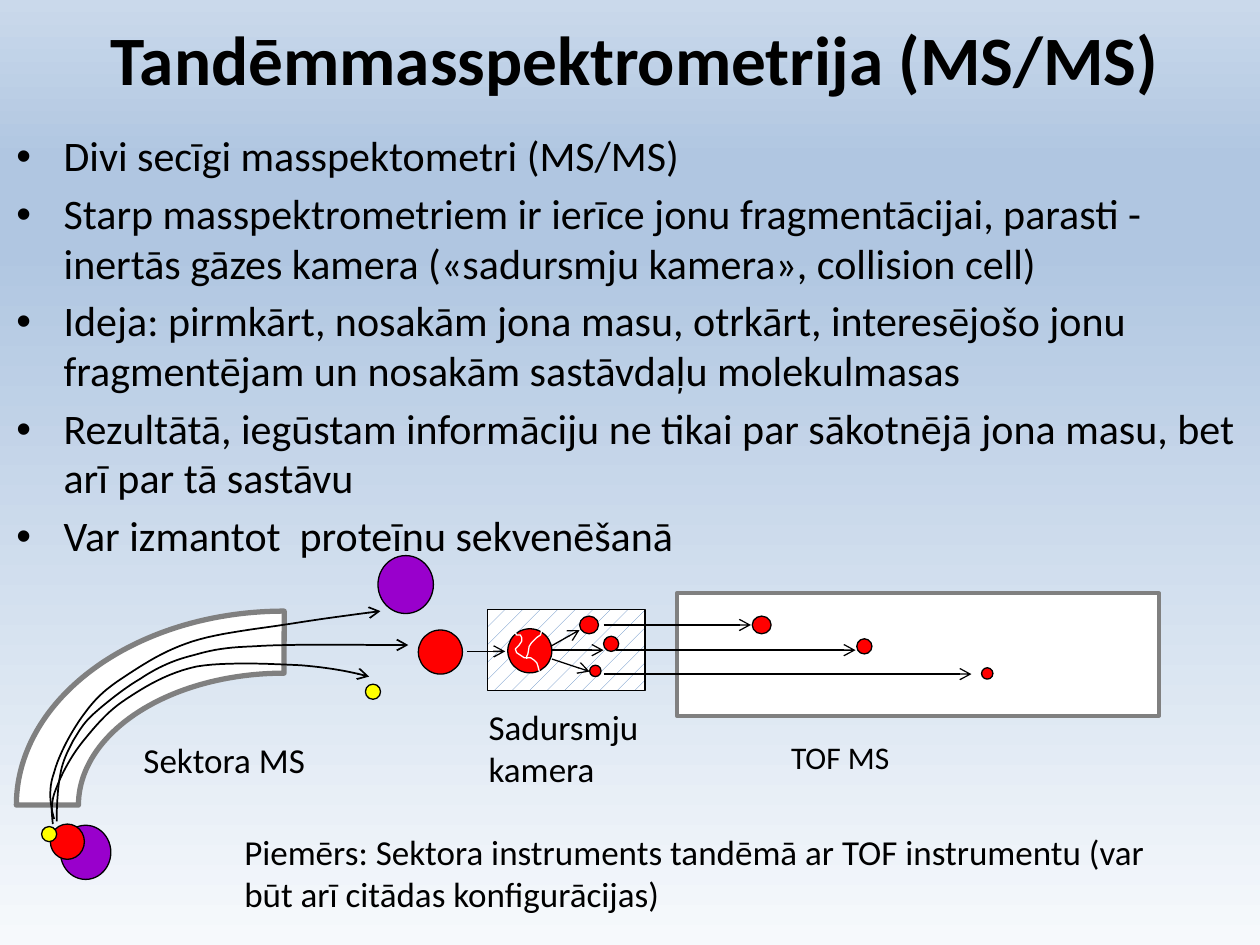
from lxml.etree import SubElement
from pptx import Presentation
from pptx.dml.color import RGBColor
from pptx.enum.dml import MSO_PATTERN
from pptx.enum.shapes import MSO_CONNECTOR, MSO_SHAPE
from pptx.enum.text import MSO_ANCHOR, MSO_AUTO_SIZE, PP_ALIGN
from pptx.oxml.ns import qn
from pptx.util import Pt

PX = 9144
STEPS = 12
SKY = [(0, "F6F9FC"), (74, "B0C6E1"), (83, "B0C6E1"), (100, "CAD9EB")]
RED, PURPLE, YELLOW = "FF0000", "9900CC", "FFFF00"
BLACK, WHITE, GRAY = "000000", "FFFFFF", "808080"

TITLE = "Tandēmmasspektrometrija (MS/MS)"
POINTS = [
    "Divi secīgi masspektometri (MS/MS)",
    "Starp masspektrometriem ir ierīce jonu fragmentācijai, parasti - inertās gāzes kamera («sadursmju kamera», collision cell)",
    "Ideja: pirmkārt, nosakām jona masu, otrkārt, interesējošo jonu fragmentējam un nosakām sastāvdaļu molekulmasas",
    "Rezultātā, iegūstam informāciju ne tikai par sākotnējā jona masu, bet arī par tā sastāvu",
    "Var izmantot  proteīnu sekvenēšanā",
]
LABELS = [
    ("Sektora MS", (104, 581, 189, 44), 20),
    ("Sadursmju kamera", (378, 555, 163, 77), 20),
    ("TOF MS", (618, 581, 288, 40), 18),
    ("Piemērs: Sektora instruments tandēmā ar TOF instrumentu (var būt arī citādas konfigurācijas)",
     (184, 654, 749, 77), 20),
]
PARTS = [
    (MSO_SHAPE.BLOCK_ARC, (13, 485, 425, 308), GRAY, 3),
    (MSO_SHAPE.RECTANGLE, (387, 484, 125, 64), BLACK, 0.75),
    (MSO_SHAPE.RECTANGLE, (537, 471, 383, 97), GRAY, 2.25),
]
IONS = [
    (PURPLE, (48, 655, 40, 43)), (PURPLE, (300, 441, 44, 46)),
    (RED, (332, 500, 35, 35)), (YELLOW, (290, 543, 12, 12)),
    (RED, (40, 654, 27, 28)), (YELLOW, (33, 656, 12, 12)),
    (RED, (403, 499, 35, 35)),
    (RED, (460, 489, 15, 14)), (RED, (479, 505, 12, 12)), (RED, (468, 528, 9, 9)),
    (RED, (597, 489, 15, 14)), (RED, (680, 507, 12, 12)), (RED, (779, 530, 9, 9)),
]
ARROWS = [
    (371, 517, 401, 517), (437, 513, 460, 500), (437, 516, 479, 516),
    (438, 523, 468, 533), (479, 496, 596, 496), (489, 516, 679, 516),
    (479, 535, 771, 535),
]
TRACKS = [
    [(42, 654), (41, 645), (40, 636), (45, 625), (49, 614), (57, 599), (67, 587),
     (76, 576), (86, 564), (100, 555), (115, 545), (133, 534), (156, 529),
     (179, 525), (217, 527), (239, 528), (262, 530), (278, 533), (293, 537)],
    [(43, 650), (40, 639), (38, 627), (43, 613), (47, 598), (58, 578), (68, 565),
     (77, 553), (85, 546), (99, 537), (114, 527), (131, 516), (153, 509),
     (175, 502), (206, 499), (231, 495), (256, 491), (279, 488), (302, 485)],
    [(45, 652), (45, 638), (46, 624), (48, 614), (50, 603), (54, 596), (58, 588),
     (63, 580), (66, 574), (75, 566), (84, 558), (99, 546), (111, 539),
     (123, 531), (135, 525), (150, 521), (165, 517), (173, 514), (202, 513),
     (230, 511), (280, 512), (324, 512)],
]
CRACKS = [
    [(409, 502), (410, 504), (413, 504), (414, 506), (414, 509), (412, 512),
     (409, 515), (410, 518), (413, 520), (416, 522), (421, 522), (424, 524),
     (426, 526), (427, 529), (428, 533)],
    [(430, 500), (429, 504), (426, 506), (424, 508), (422, 510), (420, 513),
     (419, 519), (418, 521), (418, 523)],
]


def hue(code):
    return RGBColor.from_string(code)


def style(obj, **vals):
    for key, val in vals.items():
        setattr(obj, key, val)


def place(shape, box):
    style(shape, **dict(zip(("left", "top", "width", "height"), (n * PX for n in box))))


def write(para, text, size, bold=False):
    run = para.add_run()
    run.text = text
    style(run.font, name="Calibri", size=Pt(size), bold=bold)
    run.font.color.rgb = hue(BLACK)


def edge(shape, code, width):
    shape.line.color.rgb = hue(code)
    shape.line.width = Pt(width)


def tip(shape):
    SubElement(shape.line._get_or_add_ln(), qn("a:tailEnd"), type="arrow")


def solid(kind, box, fill, line, width):
    shape = shapes.add_shape(kind, *(n * PX for n in box))
    shape.shadow.inherit = False
    shape.fill.solid()
    shape.fill.fore_color.rgb = hue(fill)
    edge(shape, line, width)
    return shape


def curve(nodes):
    spots = [nodes[0]]
    for k in range(0, len(nodes) - 1, 3):
        quad = nodes[k:k + 4]
        for i in range(1, STEPS + 1):
            t = i / STEPS
            mix = ((1 - t) ** 3, 3 * t * (1 - t) ** 2, 3 * t * t * (1 - t), t ** 3)
            spots.append(tuple(sum(m * p[d] for m, p in zip(mix, quad)) for d in (0, 1)))
    return spots


def trace(spots, code, width):
    spots = [(round(x * PX), round(y * PX)) for x, y in spots]
    pen = shapes.build_freeform(*spots[0])
    pen.add_line_segments(spots[1:], close=False)
    shape = pen.convert_to_shape()
    shape.shadow.inherit = False
    shape.fill.background()
    edge(shape, code, width)
    return shape


deck = Presentation()
style(deck, slide_width=1000 * PX, slide_height=750 * PX)
slide = deck.slides.add_slide(deck.slide_layouts[1])
shapes = slide.shapes

back = slide.background.fill
back.gradient()
back.gradient_angle = 90
stops = slide._element.find(".//" + qn("a:gsLst"))
for stop in list(stops):
    stops.remove(stop)
for pos, code in SKY:
    stop = SubElement(stops, qn("a:gs"), pos=str(pos * 1000))
    SubElement(stop, qn("a:srgbClr"), val=code)

title, body = slide.placeholders
place(title, (54, -17, 900, 125))
style(title.text_frame, auto_size=MSO_AUTO_SIZE.NONE, vertical_anchor=MSO_ANCHOR.MIDDLE)
head = title.text_frame.paragraphs[0]
head.alignment = PP_ALIGN.CENTER
write(head, TITLE, 39.6, True)

place(body, (3, 100, 997, 342))
frame = body.text_frame
frame.auto_size = MSO_AUTO_SIZE.NONE
for i, text in enumerate(POINTS):
    para = frame.add_paragraph() if i else frame.paragraphs[0]
    style(para, line_spacing=0.98, space_before=Pt(4.8))
    write(para, text, 24)

arc, cell, tube = [solid(kind, box, WHITE, line, width) for kind, box, line, width in PARTS]
for i, val in enumerate((108, 162, 0.16)):
    arc.adjustments[i] = val
cell.fill.patterned()
cell.fill.pattern = MSO_PATTERN.PERCENT_5
cell.fill.fore_color.rgb = hue("4F81BD")
cell.fill.back_color.rgb = hue(WHITE)

for nodes in TRACKS:
    tip(trace(curve(nodes), BLACK, 1))
for fill, box in IONS:
    solid(MSO_SHAPE.OVAL, box, fill, BLACK, 0.75)
for spots in CRACKS:
    trace(spots, WHITE, 0.75)
for ends in ARROWS:
    arrow = shapes.add_connector(MSO_CONNECTOR.STRAIGHT, *(n * PX for n in ends))
    edge(arrow, BLACK, 0.75)
    tip(arrow)
    SubElement(arrow._element.spPr, qn("a:effectLst"))

for text, box, size in LABELS:
    frame = shapes.add_textbox(*(n * PX for n in box)).text_frame
    frame.word_wrap = True
    write(frame.paragraphs[0], text, size)

deck.save("out.pptx")
